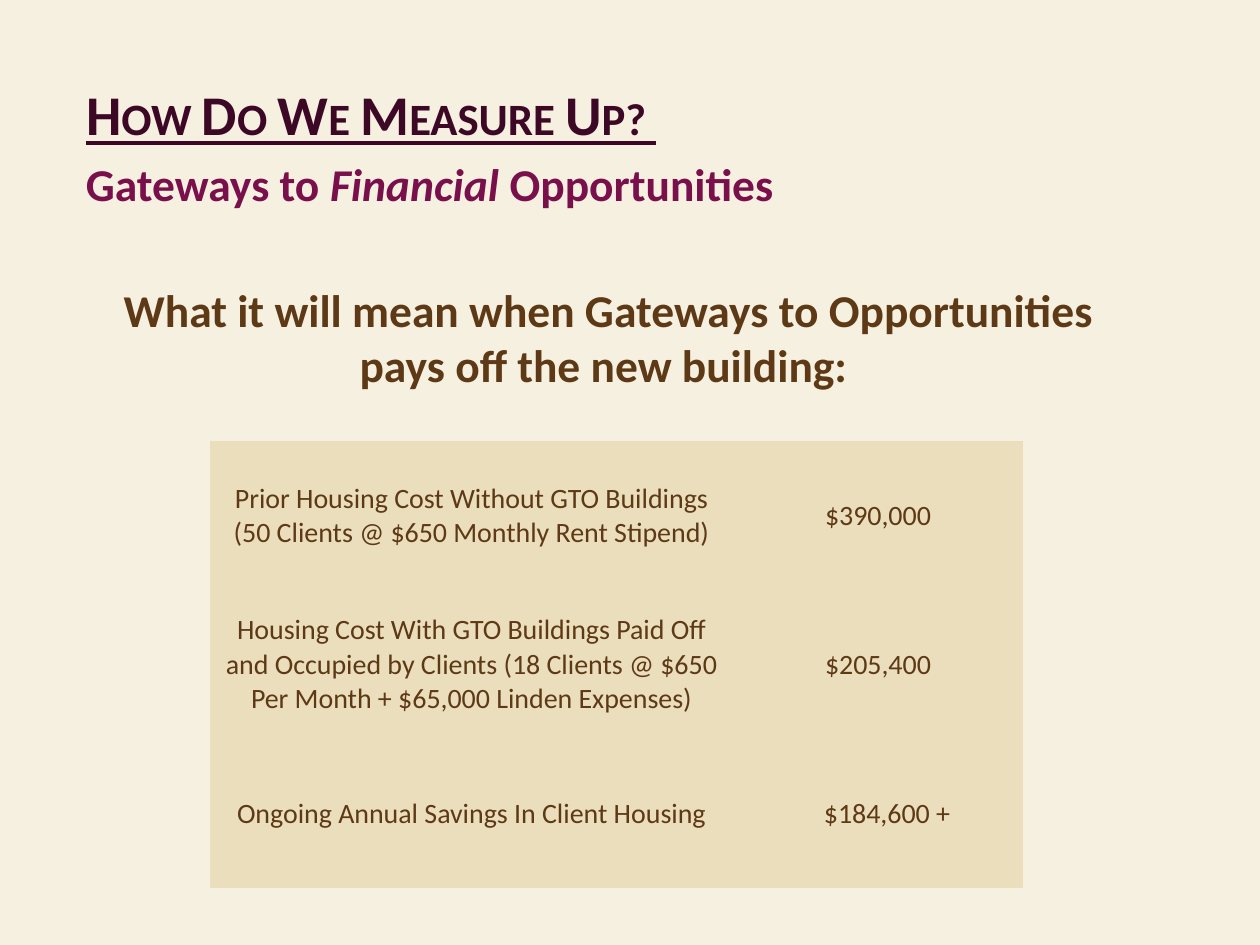
"""Builds the slide on what paying off the new building will mean."""
from pptx import Presentation, util as u
from pptx.dml import color
from pptx.enum import text

PLUM, BERRY, BROWN = "3D0826", "790F4B", "5E3916"
CREAM, SAND = "F6F0E0", "EBDEBC"
LEFT, WIDTH = 42, 612

TITLE = ["How Do We Measure Up? "]
SUBTITLE = ["Gateways to ", "Financial", " Opportunities"]
QUESTION = ["What it will mean when Gateways to Opportunities pays off the new building: "]
ROWS = [
    (["Prior Housing Cost Without GTO Buildings",
      "(50 Clients @ $650 Monthly Rent Stipend)"], "$390,000"),
    (["Housing Cost With GTO Buildings Paid Off and Occupied by Clients "
      "(18 Clients @ $650 Per Month + $65,000 Linden Expenses)"], "$205,400"),
    (["Ongoing Annual Savings In Client Housing"], "$184,600 +"),
]
COLUMNS = (299, 165.5)
ROW_HEIGHT = 85.2


def rgb(value):
    return color.RGBColor.from_string(value)


def add_run(paragraph, words, size, hue, bold=False):
    run = paragraph.add_run()
    run.text = words
    run.font.name, run.font.size, run.font.bold = "Calibri", u.Pt(size), bold
    run.font.color.rgb = rgb(hue)
    return run


def fill_box(shape, top, height, runs, size, hue, align):
    shape.left, shape.top, shape.width, shape.height = map(u.Pt, (LEFT, top, WIDTH, height))
    frame = shape.text_frame
    frame.word_wrap = True
    frame.auto_size = text.MSO_AUTO_SIZE.NONE
    frame.vertical_anchor = text.MSO_ANCHOR.TOP
    frame.margin_top = frame.margin_bottom = 0
    paragraph = frame.paragraphs[0]
    paragraph.alignment = align
    paragraph.line_spacing = 1.0
    paragraph.space_before = u.Pt(0)
    return [add_run(paragraph, words, size, hue, True) for words in runs]


def fill_cell(cell, lines):
    cell.fill.solid()
    cell.fill.fore_color.rgb = rgb(SAND)
    cell.vertical_anchor = text.MSO_ANCHOR.MIDDLE
    paragraph = cell.text_frame.paragraphs[0]
    paragraph.alignment = text.PP_ALIGN.CENTER
    for index, line in enumerate(lines):
        if index:
            paragraph.add_line_break()
        add_run(paragraph, line, 16, BROWN)


def add_costs(slide):
    frame = slide.shapes.add_table(len(ROWS), len(COLUMNS), u.Pt(120), u.Pt(252),
                                   u.Pt(sum(COLUMNS)), u.Pt(ROW_HEIGHT * len(ROWS)))
    table = frame.table
    table.first_row = table.horz_banding = False
    for column, width in zip(table.columns, COLUMNS):
        column.width = u.Pt(width)
    for index, (label, amount) in enumerate(ROWS):
        table.rows[index].height = u.Pt(ROW_HEIGHT)
        fill_cell(table.cell(index, 0), label)
        fill_cell(table.cell(index, 1), [amount])
    table.cell(len(ROWS) - 1, 1).margin_left = u.Pt(17.5)
    style = frame._element.find(".//{*}tableStyleId")
    style.text = "{2D5ABB26-0587-4C30-8999-92F81FD0307C}"


def main():
    presentation = Presentation()
    presentation.slide_width, presentation.slide_height = u.Pt(720), u.Pt(540)
    slide = presentation.slides.add_slide(presentation.slide_layouts[5])
    slide.background.fill.solid()
    slide.background.fill.fore_color.rgb = rgb(CREAM)

    align = text.PP_ALIGN
    heading, = fill_box(slide.shapes.title, 45.5, 40, TITLE, 32, PLUM, align.LEFT)
    heading.font.underline = True
    heading.font._element.set("cap", "small")

    subtitle = slide.shapes.add_textbox(0, 0, 0, 0)
    runs = fill_box(subtitle, 89.2, 32, SUBTITLE, 26, BERRY, align.LEFT)
    runs[1].font.italic = True

    question = slide.shapes.add_textbox(0, 0, 0, 0)
    fill_box(question, 161.4, 64, QUESTION, 26, BROWN, align.CENTER)
    add_costs(slide)
    presentation.save("out.pptx")


if __name__ == "__main__":
    main()
